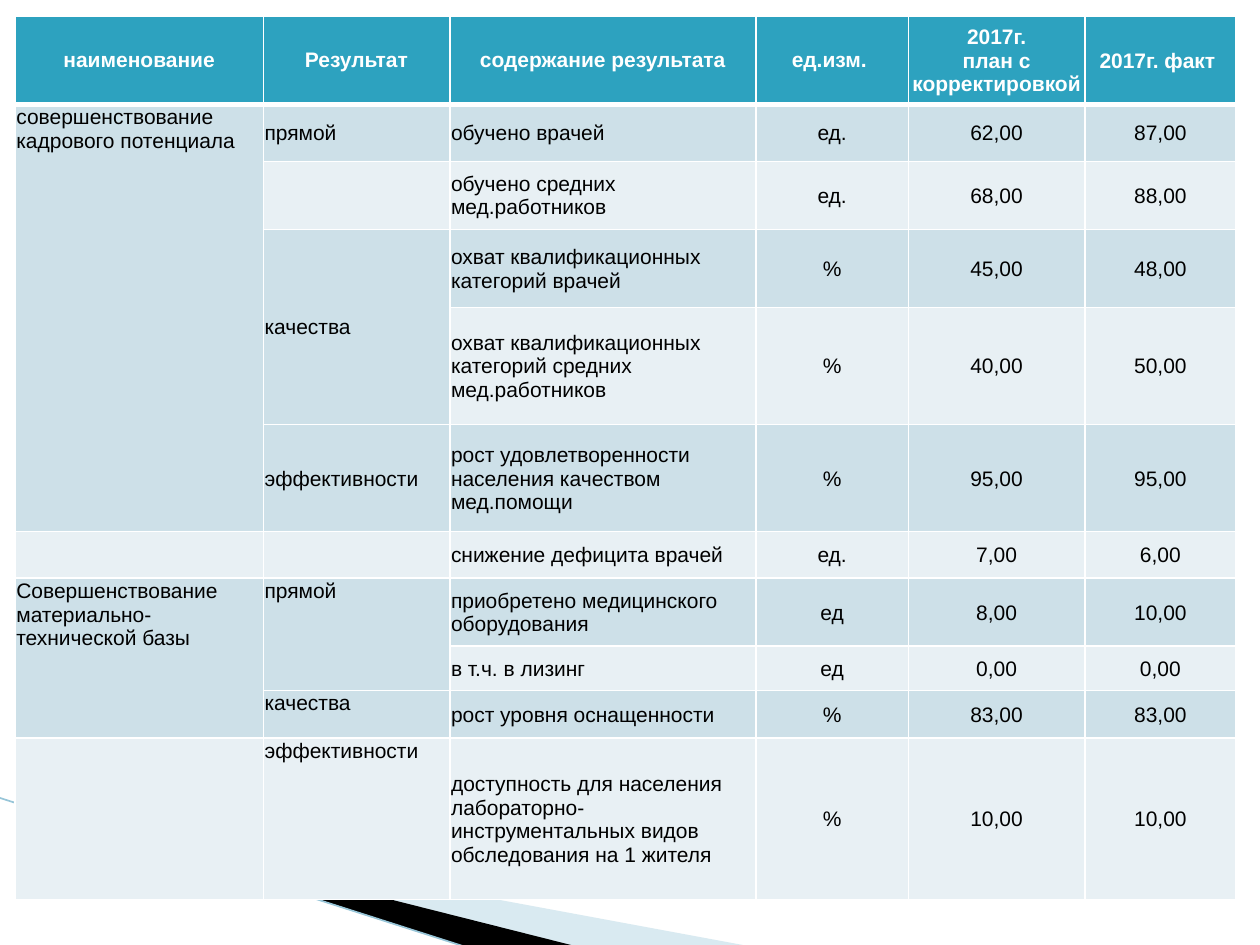
from lxml.etree import SubElement
from pptx import Presentation
from pptx.dml.color import RGBColor
from pptx.enum.shapes import MSO_CONNECTOR
from pptx.enum.text import MSO_ANCHOR as Anchor, PP_ALIGN as Align
from pptx.oxml import parse_xml
from pptx.oxml.ns import nsdecls, qn
from pptx.util import Inches, Pt

THEME = {
    "font": "Arial", "size": 12,
    "head": "2DA2BF", "odd": "CDE0E8", "even": "E8F0F4",
    "head_text": "FFFFFF", "text": "000000", "border": "FFFFFF",
    "pale": "A0CBDC", "dark": "000000", "line": "97C5D8",
}

# Content: one tuple per row, empty strings for blank or merged cells
HEADER = ("наименование", "Результат", "содержание результата", "ед.изм. ",
          "2017г.\nплан с корректировкой ", "2017г. факт ")
ROWS = [
    ("совершенствование кадрового потенциала", "прямой", "обучено врачей", "ед.", "62,00", "87,00"),
    ("", "", "обучено средних мед.работников", "ед.", "68,00", "88,00"),
    ("", "качества", "охват квалификационных категорий врачей", "%", "45,00", "48,00"),
    ("", "", "охват квалификационных категорий средних мед.работников", "%", "40,00", "50,00"),
    ("", "эффективности", "рост удовлетворенности населения качеством мед.помощи", "%", "95,00", "95,00"),
    ("", "", "снижение дефицита врачей", "ед.", "7,00", "6,00"),
    ("Совершенствование материально-технической базы", "прямой",
     "приобретено медицинского оборудования", "ед", "8,00", "10,00"),
    ("", "", "в т.ч. в лизинг", "ед", "0,00", "0,00"),
    ("", "качества", "рост уровня оснащенности", "%", "83,00", "83,00"),
    ("", "эффективности", "доступность для населения лабораторно-инструментальных видов "
     "обследования на 1 жителя", "%", "10,00", "10,00"),
]
COL_WIDTHS = (1.97, 1.48, 2.43, 1.21, 1.4, 1.2)
ROW_HEIGHTS = (0.7, 0.45, 0.54, 0.62, 0.93, 0.85, 0.37, 0.54, 0.35, 0.38, 1.28)
MERGES = [(1, 0, 5), (3, 1, 4), (7, 0, 9), (7, 1, 8)]  # first row, column, last row
TOP_RESULTS_FROM = 7  # result names sit at the top of the cell from this row on

# Corner decoration: outline points, fill, opacity in percent
WEDGES = [
    ([(0.55, 6.51), (5.95, 7.51), (4.56, 7.51), (0.55, 6.5)], "pale", 40),
    ([(0.53, 6.49), (4.57, 7.51), (3.72, 7.52), (0.54, 6.5)], "dark", 100),
]


def color(name):
    return RGBColor.from_string(THEME[name])


def add_wedge(slide, points, fill, opacity):
    pts = [(Inches(x), Inches(y)) for x, y in points]
    builder = slide.shapes.build_freeform(*pts[0])
    builder.add_line_segments(pts[1:], close=True)
    sp = builder.convert_to_shape()
    sp.shadow.inherit = False
    sp.fill.solid()
    sp.fill.fore_color.rgb = color(fill)
    sp.line.fill.background()
    if opacity < 100:
        clr = sp.fill._xPr.find(".//" + qn("a:srgbClr"))
        SubElement(clr, qn("a:alpha"), val=str(opacity * 1000))


def add_edge_line(slide):
    line = slide.shapes.add_connector(
        MSO_CONNECTOR.STRAIGHT, Inches(-0.01), Inches(6.33), Inches(3.71), Inches(7.52))
    line.line.color.rgb = color("line")
    line.line.width = Pt(0.95)
    SubElement(line._element.spPr, qn("a:effectLst"))


def set_borders(cell, bottom):
    tc_pr = cell._tc.get_or_add_tcPr()
    widths = {"L": 1, "R": 1, "T": 1, "B": bottom}
    for i, (side, width) in enumerate(widths.items()):
        tc_pr.insert(i, parse_xml(
            f'<a:ln{side} {nsdecls("a")} w="{Pt(width)}"><a:solidFill>'
            f'<a:srgbClr val="{THEME["border"]}"/></a:solidFill></a:ln{side}>'))


def fill_cell(cell, text, row, col):
    is_head = row == 0
    top = not is_head and (col == 0 or (col == 1 and row >= TOP_RESULTS_FROM))
    inset = Inches(0 if is_head and col < 4 else 0.01)
    cell.margin_left = cell.margin_right = cell.margin_top = inset
    cell.margin_bottom = 0
    cell.vertical_anchor = Anchor.TOP if top else Anchor.MIDDLE
    cell.fill.solid()
    cell.fill.fore_color.rgb = color("head" if is_head else "odd" if row % 2 else "even")
    set_borders(cell, 3 if is_head else 1)
    if not text:
        return
    tf = cell.text_frame
    for i, part in enumerate(text.split("\n")):
        p = tf.add_paragraph() if i else tf.paragraphs[0]
        p.alignment = Align.CENTER if is_head or col >= 3 else Align.LEFT
        r = p.add_run()
        r.text = part
        r.font.name = THEME["font"]
        r.font.size = Pt(THEME["size"])
        r.font.bold = is_head
        r.font.color.rgb = color("head_text" if is_head else "text")


def add_results_table(slide):
    data = [HEADER, *ROWS]
    table = slide.shapes.add_table(
        len(data), len(HEADER), Inches(0.12), Inches(0.13),
        Inches(sum(COL_WIDTHS)), Inches(sum(ROW_HEIGHTS))).table
    for column, width in zip(table.columns, COL_WIDTHS):
        column.width = Inches(width)
    for row, height in zip(table.rows, ROW_HEIGHTS):
        row.height = Inches(height)
    for i, values in enumerate(data):
        for j, text in enumerate(values):
            fill_cell(table.cell(i, j), text, i, j)
    for first, col, last in MERGES:
        table.cell(first, col).merge(table.cell(last, col))


def main():
    prs = Presentation()
    prs.slide_width, prs.slide_height = Inches(10), Inches(7.5)
    slide = prs.slides.add_slide(prs.slide_layouts[6])
    # Decoration behind the table
    for points, fill, opacity in WEDGES:
        add_wedge(slide, points, fill, opacity)
    add_edge_line(slide)
    # Results table
    add_results_table(slide)
    prs.save("out.pptx")


if __name__ == "__main__":
    main()
